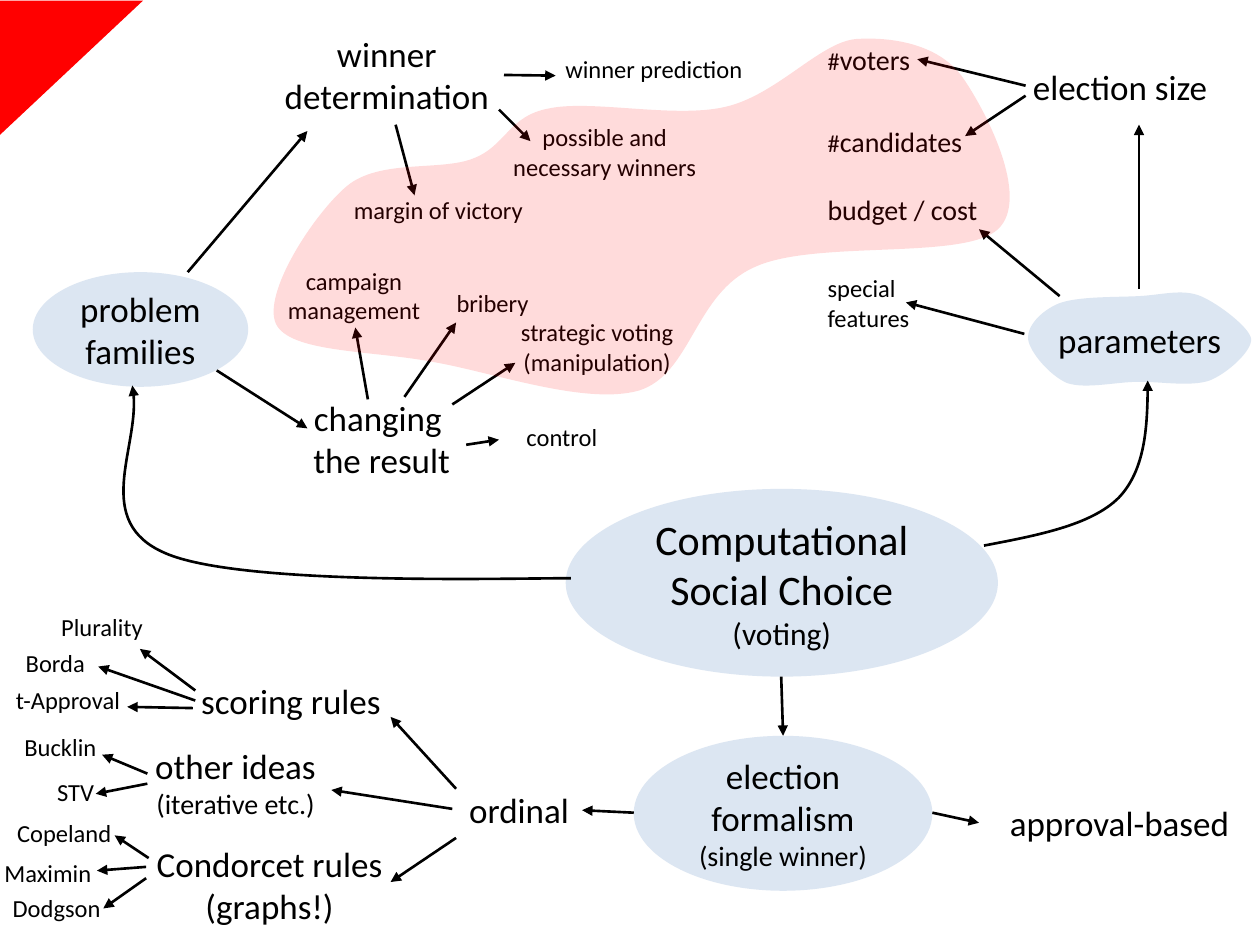
from dataclasses import dataclass
from typing import NamedTuple, Optional

from lxml.etree import SubElement
from pptx import Presentation
from pptx.dml.color import RGBColor
from pptx.enum.shapes import MSO_CONNECTOR as Connector, MSO_SHAPE as Preset
from pptx.enum.text import MSO_ANCHOR as Anchor, MSO_AUTO_SIZE as AutoSize, PP_ALIGN as Align
from pptx.oxml.ns import qn
from pptx.util import Cm, Pt


@dataclass(frozen=True)
class Theme:
    font: str = "Calibri"
    ink: RGBColor = RGBColor(0, 0, 0)
    bubble: RGBColor = RGBColor(0xDC, 0xE6, 0xF2)
    accent: RGBColor = RGBColor(0xFF, 0, 0)
    region_opacity: int = 14
    line_width: float = 1.5
    hub: int = 24
    hub_note: int = 18
    topic: int = 20
    note: int = 16
    leaf: int = 14


THEME = Theme()


class Run(NamedTuple):
    text: str
    size: int


class Box(NamedTuple):
    left: float
    top: float
    width: float
    height: float


class Node(NamedTuple):
    """A bubble or label; each inner tuple of runs is one paragraph."""
    box: Box
    paragraphs: tuple
    align: Align = Align.CENTER


class Arrow(NamedTuple):
    """Arrow from (x1, y1) to (x2, y2), optionally glued as (node text, side)."""
    x1: float
    y1: float
    x2: float
    y2: float
    begin: Optional[tuple] = None
    end: Optional[tuple] = None


class Curve(NamedTuple):
    """Start point and Bezier segments (control 1, control 2, end)."""
    start: tuple
    segments: tuple
    closed: bool = False


def length(inches: float) -> Cm:
    return Cm(inches * 2.54)


def topic(left, top, width, height, text) -> Node:
    return Node(Box(left, top, width, height), ((Run(text, THEME.topic),),))


def leaf(left, top, text, height=0.34) -> Node:
    return Node(Box(left, top, 1.76, height), ((Run(text, THEME.leaf),),))


def parameter(top, height, *runs, width=1.86) -> Node:
    return Node(Box(6.47, top, width, height), (runs,), Align.LEFT)


BUBBLES = (
    Node(Box(4.49, 3.88, 3.43, 1.49), ((Run("Computational Social Choice", THEME.hub),),
                                       (Run("(voting)", THEME.hub_note),))),
    Node(Box(5.03, 5.84, 2.37, 1.23), ((Run("election formalism", THEME.topic),),
                                       (Run("(single winner)", THEME.note),))),
    topic(0.26, 2.16, 1.71, 0.91, "problem families"),
)
LABELS = (
    topic(7.77, 6.31, 2.23, 0.44, "approval-based"),
    topic(3.62, 6.21, 1, 0.44, "ordinal"),
    topic(1.43, 5.34, 1.76, 0.44, "scoring rules"),
    topic(1.06, 6.64, 2.16, 0.77, "Condorcet rules\n(graphs!)"),
    Node(Box(0.99, 5.86, 1.76, 0.71), ((Run("other ideas\n", THEME.topic),
                                        Run("(iterative etc.)", THEME.note)),)),
    topic(2.14, 0.21, 1.86, 0.77, "winner determination"),
    topic(2.1, 3.1, 1.86, 0.77, "changing \nthe result"),
    topic(7.96, 0.47, 1.86, 0.44, "election size"),
    leaf(-0.07, 4.81, "Plurality"), leaf(-0.44, 5.09, "Borda"),
    leaf(-0.34, 5.39, "t-Approval"), leaf(-0.4, 5.76, "Bucklin"),
    leaf(-0.28, 6.12, "STV"), leaf(-0.37, 6.44, "Copeland"),
    leaf(-0.5, 6.76, "Maximin"), leaf(-0.43, 7.04, "Dodgson"),
    leaf(4.31, 0.38, "winner prediction"),
    leaf(3.92, 0.92, "possible and necessary winners", 0.57),
    leaf(2.6, 1.5, "margin of victory"),
    leaf(1.93, 2.06, "campaign management", 0.57), leaf(3.03, 2.24, "bribery"),
    leaf(3.86, 2.47, "strategic voting (manipulation)", 0.57), leaf(3.58, 3.3, "control"),
    parameter(0.29, 0.37, Run("#", THEME.leaf), Run("voters", THEME.note)),
    parameter(0.94, 0.37, Run("#", THEME.leaf), Run("candidates", THEME.note)),
    parameter(1.48, 0.37, Run("budget / cost", THEME.note)),
    parameter(2.12, 0.57, Run("special features", THEME.leaf), width=1.03),
)
ARROWS = (
    Arrow(6.2, 5.37, 6.21, 5.84, end=("election formalism", 0)),
    Arrow(7.4, 6.45, 7.77, 6.53, end=("approval-based", 1)),
    Arrow(5.03, 6.45, 4.62, 6.43, end=("ordinal", 3)),
    Arrow(3.62, 6.65, 3.1, 7), Arrow(3.59, 6.42, 2.63, 6.27), Arrow(3.62, 6.26, 3.1, 5.69),
    Arrow(1.55, 5.48, 1.11, 5.15), Arrow(1.55, 5.56, 0.78, 5.29), Arrow(1.53, 5.62, 1.01, 5.61),
    Arrow(1.17, 6.14, 0.81, 5.99), Arrow(1.17, 6.22, 0.76, 6.3),
    Arrow(1.18, 6.81, 0.91, 6.63), Arrow(1.16, 6.88, 0.77, 6.91), Arrow(1.16, 6.97, 0.82, 7.21),
    Arrow(1.72, 2.94, 2.44, 3.4), Arrow(1.49, 2.16, 2.44, 1.04),
    Arrow(3.7, 3.53, 3.96, 3.49), Arrow(3.59, 3.21, 4.09, 2.88),
    Arrow(3.21, 3.15, 3.62, 2.56), Arrow(2.92, 3.17, 2.82, 2.6),
    Arrow(3.14, 0.99, 3.29, 1.55), Arrow(3.96, 0.87, 4.21, 1.12),
    Arrow(4, 0.59, 4.41, 0.6, begin=("winner determination", 3)),
    Arrow(9.04, 2.29, 9.04, 0.99), Arrow(8.14, 0.68, 7.28, 0.47), Arrow(8.14, 0.76, 7.66, 1.08),
    Arrow(8.41, 2.35, 7.77, 1.82), Arrow(8.13, 2.65, 7.19, 2.4),
)
CURVED_ARROWS = (
    Curve((4.53, 4.59), (((4, 4.59), (1.9, 4.65), (1.31, 4.39)),
                         ((0.73, 4.14), (1.14, 3.5), (1.05, 3.06)))),
    Curve((7.81, 4.33), (((8.23, 4.25), (8.66, 4.17), (8.88, 3.95)),
                         ((9.09, 3.73), (9.11, 3.32), (9.11, 3.02)))),
)
PARAMETERS = Curve((8.16, 2.69), (
    ((8.15, 2.59), (8.26, 2.47), (8.4, 2.41)), ((8.55, 2.35), (8.86, 2.36), (9.04, 2.35)),
    ((9.23, 2.34), (9.38, 2.29), (9.53, 2.35)), ((9.67, 2.41), (9.92, 2.6), (9.93, 2.69)),
    ((9.94, 2.78), (9.75, 2.96), (9.6, 3.02)), ((9.45, 3.07), (9.23, 3.03), (9.04, 3.03)),
    ((8.86, 3.03), (8.62, 3.09), (8.47, 3.04)), ((8.33, 2.98), (8.17, 2.79), (8.16, 2.69))), True)
REGION = Curve((4.36, 0.86), (
    ((4.03, 0.92), (4.02, 1.16), (3.75, 1.26)), ((3.49, 1.36), (3.01, 1.26), (2.75, 1.48)),
    ((2.49, 1.7), (2.08, 2.33), (2.19, 2.57)), ((2.3, 2.8), (2.94, 2.78), (3.42, 2.87)),
    ((3.9, 2.95), (4.64, 3.22), (5.07, 3.1)), ((5.49, 2.97), (5.51, 2.33), (5.99, 2.12)),
    ((6.46, 1.9), (7.65, 2.07), (7.92, 1.82)), ((8.19, 1.57), (7.81, 0.85), (7.63, 0.6)),
    ((7.44, 0.35), (7.08, 0.29), (6.79, 0.31)), ((6.5, 0.34), (6.16, 0.76), (5.75, 0.85)),
    ((5.35, 0.94), (4.7, 0.79), (4.36, 0.86))), True)


def write(shape, paragraphs, align=Align.CENTER, **frame_format) -> None:
    frame = shape.text_frame
    for name, value in {"word_wrap": True, **frame_format}.items():
        setattr(frame, name, value)
    for index, runs in enumerate(paragraphs):
        paragraph = frame.add_paragraph() if index else frame.paragraphs[0]
        paragraph.alignment = align
        for text, size in runs:
            for number, part in enumerate(text.split("\n")):
                if number:
                    paragraph.add_line_break()
                if part:
                    run = paragraph.add_run()
                    run.text = part
                    for name, value in {"name": THEME.font, "size": Pt(size)}.items():
                        setattr(run.font, name, value)
                    run.font.color.rgb = THEME.ink


def paint(shape, colour: RGBColor) -> None:
    shape.shadow.inherit = False
    shape.fill.solid()
    shape.fill.fore_color.rgb = colour
    shape.line.fill.background()


def style_arrow(shape) -> None:
    shape.line.color.rgb = THEME.ink
    shape.line.width = Pt(THEME.line_width)
    SubElement(shape.line._get_or_add_ln(), qn("a:tailEnd"), type="triangle")


def draw_preset(slide, preset, box: Box, colour: RGBColor):
    shape = slide.shapes.add_shape(preset, *map(length, box))
    paint(shape, colour)
    return shape


def draw_label(slide, node: Node):
    shape = slide.shapes.add_textbox(*map(length, node.box))
    write(shape, node.paragraphs, node.align, auto_size=AutoSize.SHAPE_TO_FIT_TEXT)
    return shape


def draw_arrow(slide, arrow: Arrow, nodes: dict) -> None:
    connector = slide.shapes.add_connector(Connector.STRAIGHT, *map(length, arrow[:4]))
    for join, target in ((connector.begin_connect, arrow.begin), (connector.end_connect, arrow.end)):
        if target:
            join(nodes[target[0]], target[1])
    style_arrow(connector)
    SubElement(connector._element.spPr, qn("a:effectLst"))


def draw_curve(slide, curve: Curve):
    """Build the outline through the end points, then bend each segment."""
    builder = slide.shapes.build_freeform(*map(length, curve.start))
    builder.add_line_segments([tuple(map(length, segment[2])) for segment in curve.segments],
                              close=curve.closed)
    shape = builder.convert_to_shape()
    shape.shadow.inherit = False
    lines = list(shape._element.iter(qn("a:lnTo")))
    for line, segment in zip(lines, curve.segments):
        line.tag = qn("a:cubicBezTo")
        line.clear()
        for x, y in segment:
            SubElement(line, qn("a:pt"), x=str(length(x) - shape.left), y=str(length(y) - shape.top))
    for line in lines[len(curve.segments):]:
        line.getparent().remove(line)
    return shape


def main() -> None:
    presentation = Presentation()
    presentation.slide_width, presentation.slide_height = Cm(25.4), Cm(19.05)
    slide = presentation.slides.add_slide(presentation.slide_layouts[6])

    corner = draw_preset(slide, Preset.RIGHT_TRIANGLE, Box(0.03, -0.03, 1.07, 1.14), THEME.accent)
    corner.rotation = 90
    nodes = {}
    for node in BUBBLES:
        bubble = draw_preset(slide, Preset.OVAL, node.box, THEME.bubble)
        write(bubble, node.paragraphs, vertical_anchor=Anchor.MIDDLE)
        nodes[node.paragraphs[0][0].text] = bubble
    parameters = draw_curve(slide, PARAMETERS)
    paint(parameters, THEME.bubble)
    write(parameters, ((Run("parameters", THEME.topic),),), vertical_anchor=Anchor.MIDDLE)
    for node in LABELS:
        nodes[node.paragraphs[0][0].text] = draw_label(slide, node)
    for arrow in ARROWS:
        draw_arrow(slide, arrow, nodes)
    for curve in CURVED_ARROWS:
        shape = draw_curve(slide, curve)
        shape.fill.background()
        style_arrow(shape)
    region = draw_curve(slide, REGION)
    paint(region, THEME.accent)
    colour = region._element.spPr.find(qn("a:solidFill"))[0]
    SubElement(colour, qn("a:alpha"), val=str(THEME.region_opacity * 1000))
    presentation.save("out.pptx")


if __name__ == "__main__":
    main()
